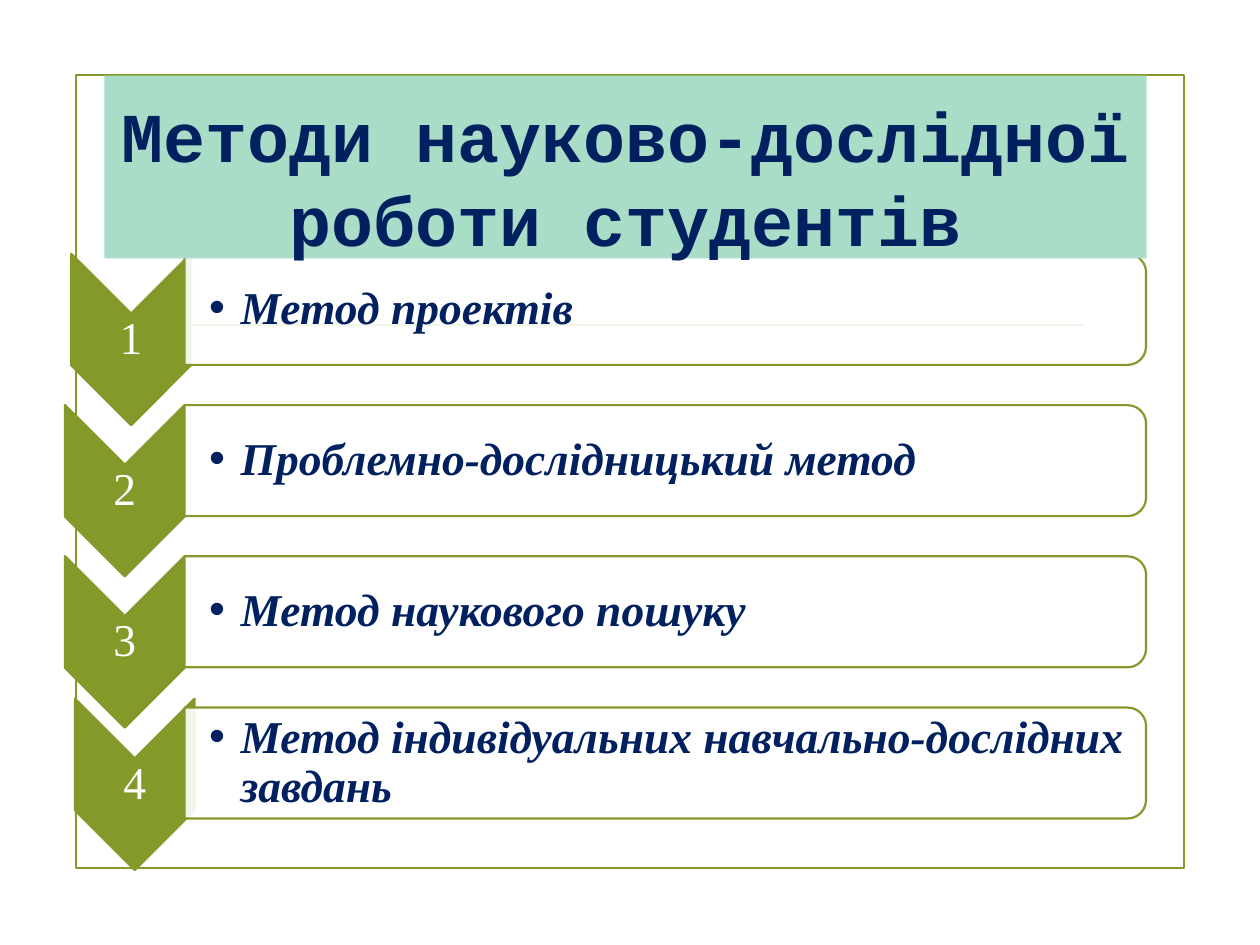
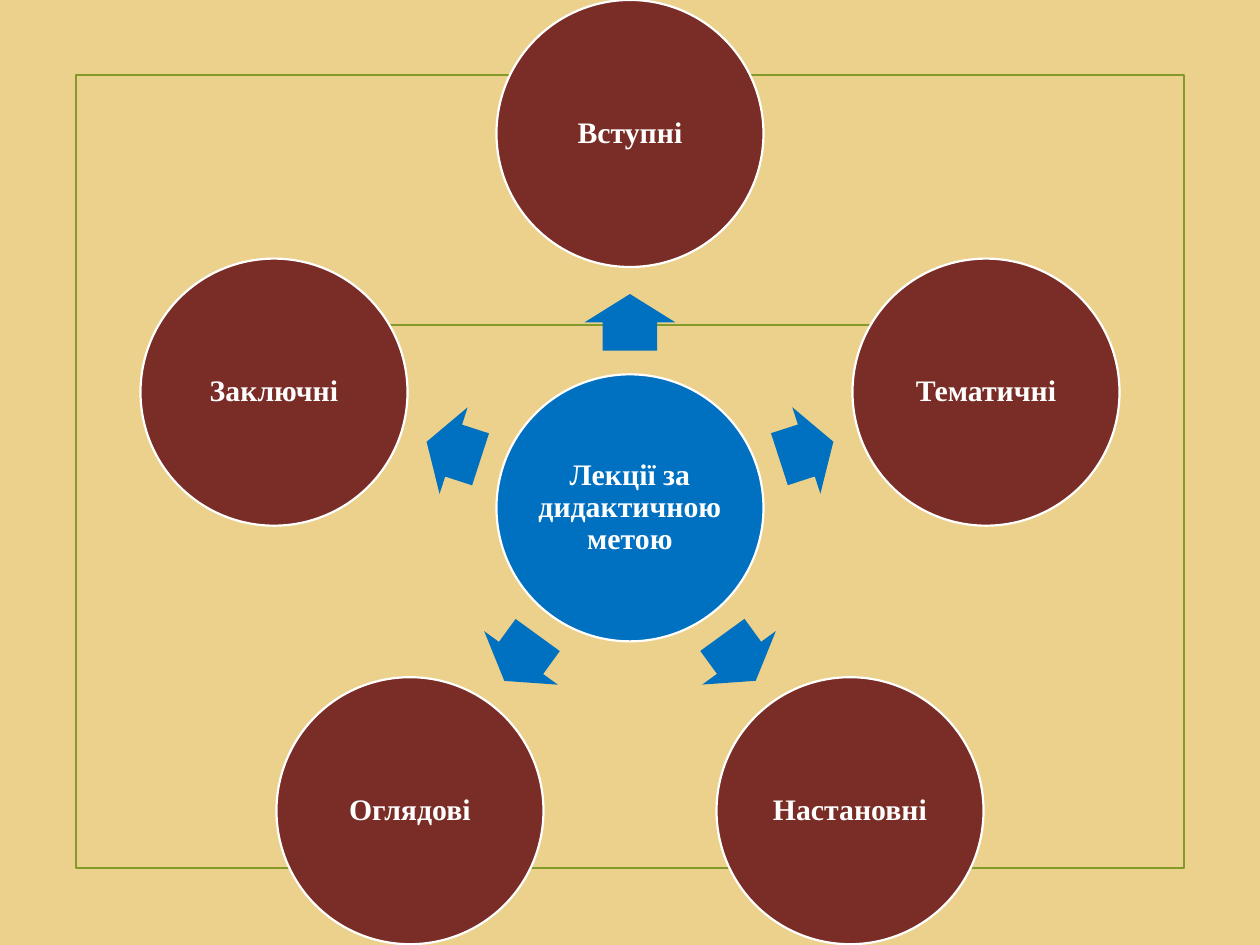
from math import cos, radians, sin

from lxml.etree import SubElement
from pptx import Presentation
from pptx.dml.color import RGBColor
from pptx.enum.shapes import MSO_CONNECTOR, MSO_SHAPE
from pptx.enum.text import MSO_ANCHOR, MSO_AUTO_SIZE, PP_ALIGN
from pptx.oxml.ns import qn
from pptx.util import Pt

COLORS = {
    "olive": "83992A",
    "navy": "002060",
    "mint": "A9DDC7",
    "sand": "EBD18C",
    "maroon": "7A2D26",
    "blue": "0070C0",
    "white": "FFFFFF",
}

TITLE_FONT = {"name": "Courier New", "size": Pt(40), "bold": True}
METHOD_FONT = {"name": "Times New Roman", "size": Pt(26), "bold": True, "italic": True}
NUMBER_FONT = {"name": "Times New Roman", "size": Pt(26)}
LECTURE_FONT = {"name": "Times New Roman", "size": Pt(17), "bold": True}

METHODS = [
    "Метод проектів",
    "Проблемно-дослідницький метод",
    "Метод наукового пошуку",
    "Метод індивідуальних навчально-дослідних завдань",
]
CHEVRON_CENTERS = [(74.9, 194), (71.3, 280.4), (71.3, 366.8), (77, 448.2)]
FIRST_PANEL_Y, ROW_PITCH = 176.8, 86.4

LECTURES = ["Вступні", "Тематичні", "Настановні", "Оглядові", "Заключні"]
HUB_X, HUB_Y = 360, 290.2
CIRCLE_SIZE = 152.6
CIRCLE_ORBIT, ARROW_ORBIT = 213.9, 106


def rgb(color):
    """Return the named colour of the palette."""
    return RGBColor.from_string(COLORS[color])


def apply(target, values):
    """Set each attribute of the target from a dict."""
    for key, value in values.items():
        setattr(target, key, value)


def set_background(slide, color):
    """Fill the slide background."""
    slide.background.fill.solid()
    slide.background.fill.fore_color.rgb = rgb(color)


def centered_box(x, y, width, height):
    """Return left, top, width and height of a box around a centre."""
    return Pt(x - width / 2), Pt(y - height / 2), Pt(width), Pt(height)


def add_figure(slide, kind, box, fill=None, line=None, rotation=0):
    """Add a preset shape with optional fill and outline."""
    figure = slide.shapes.add_shape(kind, *box)
    figure.shadow.inherit = False
    figure.rotation = rotation
    if fill:
        figure.fill.solid()
        figure.fill.fore_color.rgb = rgb(fill)
    else:
        figure.fill.background()
    if line:
        figure.line.color.rgb = rgb(line)
        figure.line.width = Pt(1.25)
    else:
        figure.line.fill.background()
    return figure


def add_bullet(paragraph, indent):
    """Give a paragraph a round bullet and a hanging indent."""
    properties = paragraph._p.get_or_add_pPr()
    properties.set("marL", str(Pt(indent)))
    properties.set("indent", str(-Pt(indent)))
    SubElement(properties, qn("a:buFont"), typeface="Arial")
    SubElement(properties, qn("a:buChar"), char="•")


def write(holder, text, font, color, align=PP_ALIGN.CENTER, left=1.4, bullet=False):
    """Write one vertically centred paragraph into a shape."""
    frame = holder.text_frame
    apply(frame, {
        "word_wrap": True,
        "vertical_anchor": MSO_ANCHOR.MIDDLE,
        "margin_left": Pt(left),
        "margin_top": Pt(1.4),
        "margin_right": Pt(1.4),
        "margin_bottom": Pt(1.4),
    })
    paragraph = frame.paragraphs[0]
    paragraph.text = text
    apply(paragraph, {"alignment": align, "line_spacing": 0.9})
    if bullet:
        add_bullet(paragraph, 18)
    apply(paragraph.runs[0].font, font)
    paragraph.runs[0].font.color.rgb = rgb(color)


def add_frame(slide):
    """Draw the olive border and rule shared by the slides."""
    border = (Pt(43.6), Pt(42.7), Pt(633), Pt(453.4))
    add_figure(slide, MSO_SHAPE.RECTANGLE, border, line="olive")
    rule = slide.shapes.add_connector(
        MSO_CONNECTOR.STRAIGHT, Pt(100.8), Pt(185.6), Pt(620), Pt(185.6))
    rule.line.color.rgb = rgb("olive")
    rule.line.width = Pt(1.25)
    SubElement(rule._element.spPr, qn("a:effectLst"))


def set_title(slide, text):
    """Place the title on its mint band in front of the other elements."""
    title = slide.shapes.title
    apply(title, {"left": Pt(59.6), "top": Pt(43.2), "width": Pt(595.6), "height": Pt(104.4)})
    title.fill.solid()
    title.fill.fore_color.rgb = rgb("mint")
    frame = title.text_frame
    apply(frame, {
        "auto_size": MSO_AUTO_SIZE.NONE,
        "word_wrap": True,
        "vertical_anchor": MSO_ANCHOR.TOP,
        "margin_top": Pt(9.5),
        "margin_bottom": Pt(0),
    })
    paragraph = frame.paragraphs[0]
    paragraph.text = text
    apply(paragraph, {"alignment": PP_ALIGN.CENTER, "line_spacing": Pt(48)})
    apply(paragraph.runs[0].font, TITLE_FONT)
    paragraph.runs[0].font.color.rgb = rgb("navy")
    slide.shapes.element.append(title.element)


def add_method(slide, number, method, chevron_center, panel_y):
    """Add a numbered chevron and its method panel."""
    add_figure(slide, MSO_SHAPE.CHEVRON, centered_box(*chevron_center, 97.9, 68.4),
               "olive", "olive", 90)
    label = slide.shapes.add_textbox(*centered_box(*chevron_center, 68.4, 29.5))
    write(label, str(number), NUMBER_FONT, "white")

    panel = add_figure(slide, MSO_SHAPE.ROUND_2_SAME_RECTANGLE,
                       centered_box(380.2, panel_y, 63.4, 549.4), "white", "olive", 90)
    panel_color = panel._element.spPr.find(qn("a:solidFill"))[0]
    SubElement(panel_color, qn("a:alpha"), val="90000")
    caption = slide.shapes.add_textbox(*centered_box(378.4, panel_y, 546.5, 57.6))
    write(caption, method, METHOD_FONT, "navy", PP_ALIGN.LEFT, 14.4, bullet=True)


def add_circle(slide, x, y, text, fill):
    """Add a labelled circle around a centre."""
    circle = add_figure(slide, MSO_SHAPE.OVAL,
                        centered_box(x, y, CIRCLE_SIZE, CIRCLE_SIZE), fill, "white")
    write(circle, text, LECTURE_FONT, "white")


def orbit_point(angle, radius):
    """Return the point at an angle and distance from the hub."""
    return HUB_X + radius * cos(radians(angle)), HUB_Y + radius * sin(radians(angle))


def add_lecture(slide, angle, text):
    """Add an arrow from the hub and the lecture circle it points to."""
    arrow = add_figure(slide, MSO_SHAPE.RIGHT_ARROW,
                       centered_box(*orbit_point(angle, ARROW_ORBIT), 32.4, 52),
                       "blue", rotation=angle)
    arrow.adjustments[0] = 0.6
    arrow.adjustments[1] = 0.5
    add_circle(slide, *orbit_point(angle, CIRCLE_ORBIT), text, "maroon")


def build_methods(deck):
    """Build the slide of student research methods."""
    slide = deck.slides.add_slide(deck.slide_layouts[5])
    set_background(slide, "white")
    add_frame(slide)
    for row, (method, center) in enumerate(zip(METHODS, CHEVRON_CENTERS)):
        add_method(slide, row + 1, method, center, FIRST_PANEL_Y + row * ROW_PITCH)
    set_title(slide, "Методи науково-дослідної роботи студентів")


def build_lectures(deck):
    """Build the radial slide of lecture types."""
    slide = deck.slides.add_slide(deck.slide_layouts[6])
    set_background(slide, "sand")
    add_frame(slide)
    add_circle(slide, HUB_X, HUB_Y, "Лекції за дидактичною метою", "blue")
    for index, lecture in enumerate(LECTURES):
        add_lecture(slide, (270 + index * 360 / len(LECTURES)) % 360, lecture)


def main():
    """Build and save the presentation."""
    deck = Presentation()
    deck.slide_width, deck.slide_height = Pt(720), Pt(540)
    build_methods(deck)
    build_lectures(deck)
    deck.save("out.pptx")


if __name__ == "__main__":
    main()
